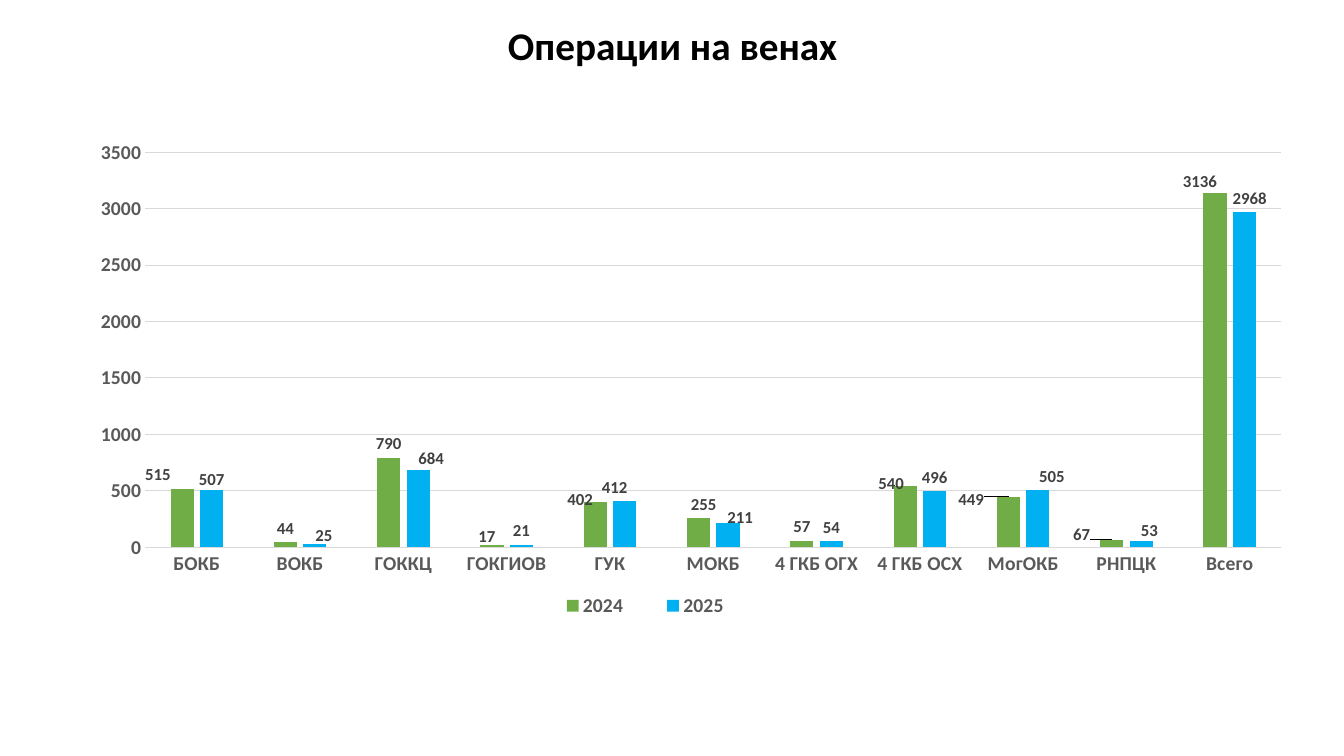
import pptx
import pptx.chart.data
import pptx.dml.color
import pptx.enum.chart
import pptx.enum.text
import pptx.oxml
import pptx.oxml.ns
import pptx.util
from pptx.util import Inches

TITLE = "Операции на венах"
FONT = "Calibri"
COLORS = {"title": "000000", "axis": "595959", "label": "404040",
          "grid": "D9D9D9", "2024": "70AD47", "2025": "00B0F0"}
HOSPITALS = ["БОКБ", "ВОКБ", "ГОККЦ", "ГОКГИОВ", "ГУК", "МОКБ",
             "4 ГКБ ОГХ", "4 ГКБ ОСХ", "МогОКБ", "РНПЦК", "Всего"]
OPERATIONS = {
    "2024": [515, 44, 790, 17, 402, 255, 57, 540, 449, 67, 3136],
    "2025": [507, 25, 684, 21, 412, 211, 54, 496, 505, 53, 2968],
}
# Label shifts from the usual place above the bar, in inches (right, down)
LABEL_SHIFTS = {
    "2024": {0: (-0.24, 0), 3: (-0.05, 0.05), 4: (-0.15, 0.12), 5: (0.05, 0),
             7: (-0.14, 0.11), 8: (-0.37, 0.17), 9: (-0.3, 0.09), 10: (-0.15, 0.02)},
    "2025": {0: (0, 0.04), 1: (0.09, 0.05), 2: (0.13, 0.03), 4: (-0.1, 0.01),
             5: (0.12, 0.08), 8: (0.14, 0), 9: (0.08, 0.03), 10: (0.05, 0)},
}
CHART_BOX = (0.75, 1.29, 12.2, 4.9)
PLOT_BOX = (0.69, 0.22, 11.27, 3.92)
LEGEND_BOX = (4.5, 4.56, 2.3, 0.32)


def rgb(name):
    return pptx.dml.color.RGBColor.from_string(COLORS[name])


def style(font, size, color):
    font.name, font.size, font.bold = FONT, pptx.util.Pt(size), True
    font.color.rgb = rgb(color)


def style_line(line):
    line.color.rgb = rgb("grid")
    line.width = pptx.util.Pt(0.75)


def manual_layout(x, y, w=None, h=None, inner=False):
    """Layout element from inches inside the chart; a shift when no size is given."""
    width, height = CHART_BOX[2:]
    parts = [("layoutTarget", "inner")] if inner else []
    if w is not None:
        parts += [("xMode", "edge"), ("yMode", "edge")]
    parts += [("x", x / width), ("y", y / height)]
    if w is not None:
        parts += [("w", w / width), ("h", h / height)]
    body = "".join(f'<c:{tag} val="{val}"/>' for tag, val in parts)
    return pptx.oxml.parse_xml(
        f'<c:layout {pptx.oxml.ns.nsdecls("c")}>'
        f"<c:manualLayout>{body}</c:manualLayout></c:layout>")


def place(parent, layout, index):
    for old in parent.xpath("c:layout"):
        parent.remove(old)
    parent.insert(index, layout)


def add_title(s):
    title = s.shapes.title
    title.left, title.top = Inches(0.67), Inches(0.17)
    title.width, title.height = Inches(12), Inches(0.6)
    tf = title.text_frame
    tf.text = TITLE
    tf.vertical_anchor = pptx.enum.text.MSO_ANCHOR.MIDDLE
    p = tf.paragraphs[0]
    p.alignment = pptx.enum.text.PP_ALIGN.CENTER
    p.line_spacing = 0.9
    style(p.runs[0].font, 28, "title")


def format_series(series):
    outside = pptx.enum.chart.XL_LABEL_POSITION.OUTSIDE_END
    series.format.fill.solid()
    series.format.fill.fore_color.rgb = rgb(series.name)
    series.invert_if_negative = False
    labels = series.data_labels
    labels.show_value = True
    labels.position = outside
    style(labels.font, 12, "label")
    shifts = LABEL_SHIFTS[series.name]
    for i in shifts:
        label = series.points[i].data_label
        label.position = outside
        style(label.font, 12, "label")
    for element, shift in zip(series._element.xpath("c:dLbls/c:dLbl"), shifts.values()):
        place(element, manual_layout(*shift), 1)


def add_operations_chart(s):
    data = pptx.chart.data.CategoryChartData()
    data.categories = HOSPITALS
    for year, values in OPERATIONS.items():
        data.add_series(year, values)
    chart = s.shapes.add_chart(
        pptx.enum.chart.XL_CHART_TYPE.COLUMN_CLUSTERED,
        *map(Inches, CHART_BOX), data).chart
    chart.has_title = False
    chart.font.name, chart.font.size = FONT, pptx.util.Pt(10)

    for axis in (chart.category_axis, chart.value_axis):
        axis.major_tick_mark = pptx.enum.chart.XL_TICK_MARK.NONE
        axis.minor_tick_mark = pptx.enum.chart.XL_TICK_MARK.NONE
        style(axis.tick_labels.font, 14, "axis")
    style_line(chart.category_axis.format.line)
    values = chart.value_axis
    values.minimum_scale, values.maximum_scale, values.major_unit = 0, 3500, 500
    values.format.line.fill.background()
    style_line(values.major_gridlines.format.line)

    plot = chart.plots[0]
    plot.gap_width, plot.overlap = 219, -27
    plot.vary_by_categories = False
    for series in plot.series:
        format_series(series)

    chart.has_legend = True
    legend = chart.legend
    legend.position = pptx.enum.chart.XL_LEGEND_POSITION.BOTTOM
    legend.include_in_layout = False
    style(legend.font, 14, "axis")
    place(legend._element, manual_layout(*LEGEND_BOX), 1)
    plot_area = chart._chartSpace.xpath("c:chart/c:plotArea")[0]
    place(plot_area, manual_layout(*PLOT_BOX, inner=True), 0)


def main():
    prs = pptx.Presentation()
    prs.slide_width, prs.slide_height = Inches(13.33), Inches(7.5)
    s = prs.slides.add_slide(prs.slide_layouts[5])
    add_title(s)
    add_operations_chart(s)
    prs.save("out.pptx")


if __name__ == "__main__":
    main()
